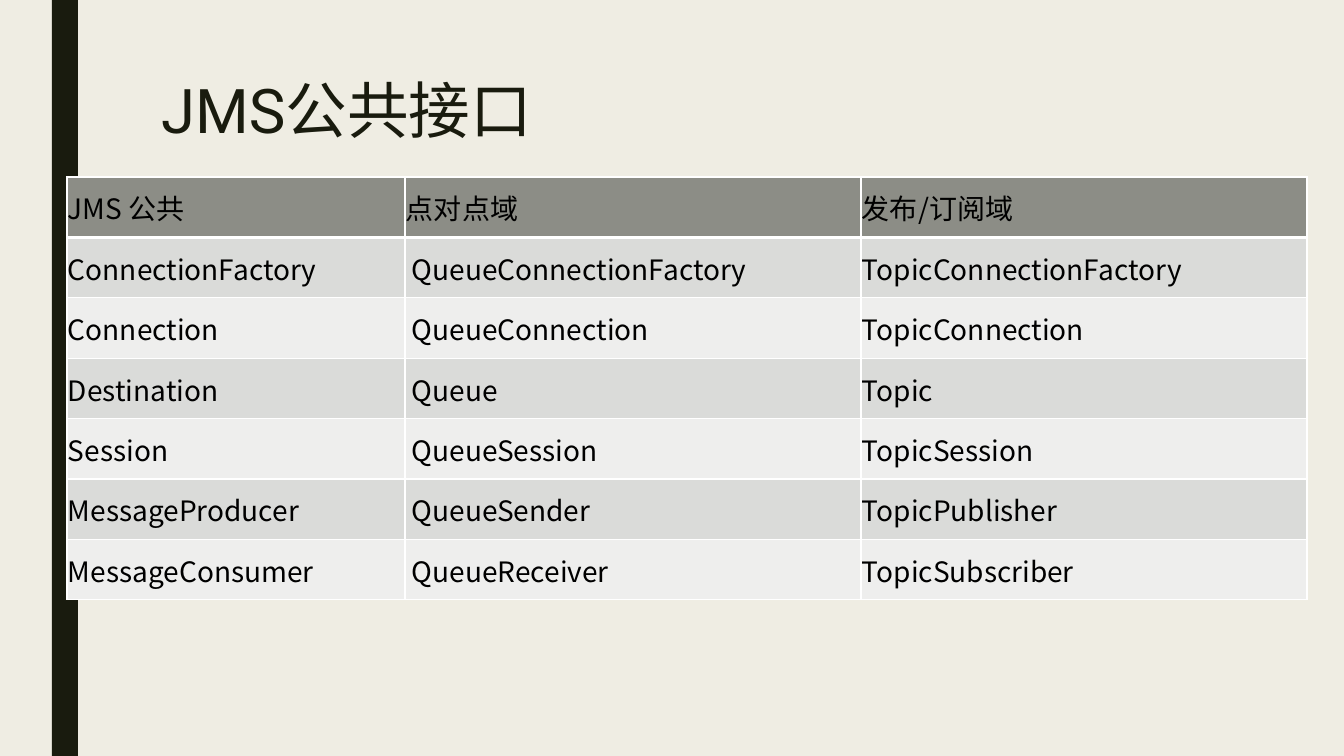
from pptx import Presentation
from pptx.dml.color import RGBColor
from pptx.enum.shapes import MSO_SHAPE
from pptx.enum.text import MSO_ANCHOR as ANCHOR, PP_ALIGN as ALIGN
from pptx.oxml import parse_xml
from pptx.oxml.ns import nsdecls
from pptx.util import Pt

PX = 914400 / 100.8
CJK = "Noto Sans CJK SC"
DARK, WHITE = "191B0E", "FFFFFF"


def paint(fill, color):
    fill.solid()
    fill.fore_color.rgb = RGBColor.from_string(color)


def write(tf, text, font, size, color):
    p = tf.paragraphs[0]
    p.alignment = ALIGN.LEFT
    r = p.add_run()
    r.text = text
    for name, value in {"name": font, "size": Pt(size), "bold": False}.items():
        setattr(r.font, name, value)
    paint(r.font.fill, color)
    r._r.get_or_add_rPr().append(
        parse_xml(f'<a:ea {nsdecls("a")} typeface="{CJK}"/>'))
    return p


prs = Presentation()
prs.slide_width, prs.slide_height = round(1344 * PX), round(756 * PX)
s = prs.slides.add_slide(prs.slide_layouts[5])
paint(s.background.fill, "EFEDE3")

# Side bar
bar = s.shapes.add_shape(MSO_SHAPE.RECTANGLE, *(round(v * PX) for v in (52, 0, 26, 756)))
bar.shadow.inherit = False
paint(bar.fill, DARK)
bar.line.fill.background()

# Title
title = s.shapes.title
for name, value in {"left": 151, "top": 76, "width": 1058, "height": 163}.items():
    setattr(title, name, round(value * PX))
tf = title.text_frame
tf.vertical_anchor = ANCHOR.TOP
write(tf, "JMS公共接口", "Roboto", 44, DARK).line_spacing = 0.89

# Table of interfaces
rows = [
    ("JMS 公共", "点对点域", "发布/订阅域"),
    ("ConnectionFactory", "QueueConnectionFactory", "TopicConnectionFactory"),
    ("Connection", "QueueConnection", "TopicConnection"),
    ("Destination", "Queue", "Topic"),
    ("Session", "QueueSession", "TopicSession"),
    ("MessageProducer", "QueueSender", "TopicPublisher"),
    ("MessageConsumer", "QueueReceiver", "TopicSubscriber"),
]
widths = (338, 456, 446)
box = (round(v * PX) for v in (67, 177, sum(widths), 423))
table = s.shapes.add_table(len(rows), len(widths), *box).table
for column, width in zip(table.columns, widths):
    column.width = round(width * PX)

for i, row in enumerate(rows):
    shade = "8C8D86" if i == 0 else ("EEEEED", "DADBD9")[i % 2]
    for j, text in enumerate(row):
        cell = table.cell(i, j)
        # Queue names are set in by one space's width
        inset = 7 if i and j == 1 else 1
        margins = {"left": inset, "top": 1, "right": 1, "bottom": 0}
        for side, value in margins.items():
            setattr(cell, f"margin_{side}", round(value * PX))
        cell.vertical_anchor = ANCHOR.MIDDLE
        write(cell.text_frame, text, CJK, 20, "000000")
        # Borders, heavier under the header
        for side in "LRTB":
            weight = Pt(3 if i == 0 and side == "B" else 1)
            cell._tc.get_or_add_tcPr().append(parse_xml(
                f'<a:ln{side} {nsdecls("a")} w="{weight}"><a:solidFill>'
                f'<a:srgbClr val="{WHITE}"/></a:solidFill></a:ln{side}>'))
        paint(cell.fill, shade)

prs.save("out.pptx")
